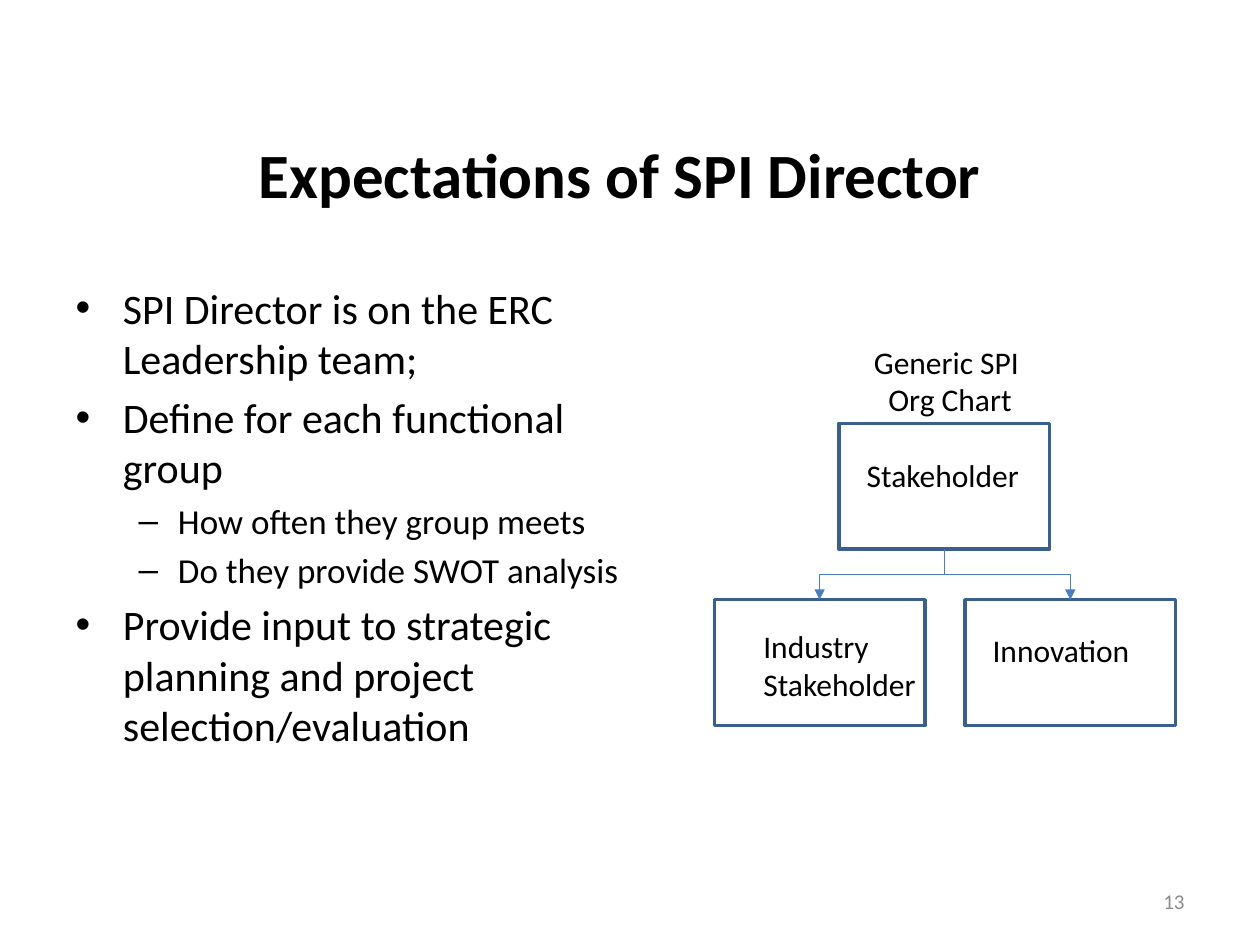
from lxml.etree import SubElement
from pptx import Presentation
from pptx.dml.color import RGBColor
from pptx.enum.shapes import MSO_CONNECTOR, MSO_SHAPE
from pptx.enum.text import MSO_ANCHOR, MSO_AUTO_SIZE, PP_ALIGN
from pptx.oxml.ns import qn
from pptx.util import Inches, Pt


def color(value):
    return RGBColor.from_string(value)


class Deck:
    """Style and current slide; lengths are cells of a 100 x 75 grid."""
    FONT, INK, GREY = "Calibri", "000000", "8C8C8C"
    BORDER, ARROW = "3A5F8C", "4B7EBC"
    COLS, ROWS = 100, 75

    def __init__(self, prs):
        self.s = prs.slides.add_slide(prs.slide_layouts[1])
        self.cell = prs.slide_width / self.COLS

    def grid(self, *cells):
        return [round(n * self.cell) for n in cells]

    def place(self, sp, box):
        sp.left, sp.top, sp.width, sp.height = self.grid(*box)

    def style(self, p, size, ink=INK, bold=False, align=None):
        p.alignment = align
        for r in p.runs:
            r.font.name, r.font.size, r.font.bold = self.FONT, Pt(size), bold
            r.font.color.rgb = color(ink)

    def title(self, text, box):
        sp = self.s.shapes.title
        self.place(sp, box)
        tf = sp.text_frame
        tf.text = text
        tf.vertical_anchor = MSO_ANCHOR.MIDDLE
        self.style(tf.paragraphs[0], 36, bold=True, align=PP_ALIGN.CENTER)

    def bullets(self, items, box):
        sp = self.s.placeholders[1]
        self.place(sp, box)
        tf = sp.text_frame
        tf.text = "\n".join(text for _, text in items)
        tf.auto_size = MSO_AUTO_SIZE.NONE
        for p, (level, _) in zip(tf.paragraphs, items):
            p.level = level
            self.style(p, 20 if level else 24)
        tf.paragraphs[0].space_before = Pt(0)

    def label(self, text, box, size=18, ink=INK, align=PP_ALIGN.LEFT, wrap=False):
        tf = self.s.shapes.add_textbox(*self.grid(*box)).text_frame
        tf.text = text
        tf.word_wrap = wrap
        tf.vertical_anchor = MSO_ANCHOR.MIDDLE if wrap else MSO_ANCHOR.TOP
        for p in tf.paragraphs:
            self.style(p, size, ink, align=align)

    def frame(self, box):
        sp = self.s.shapes.add_shape(MSO_SHAPE.RECTANGLE, *self.grid(*box))
        sp.shadow.inherit = False
        sp.fill.background()
        sp.line.color.rgb = color(self.BORDER)
        sp.line.width = Pt(2)

    def elbow(self, x1, y1, x2, y2):
        """Down, across and down again: an elbow turned by a quarter."""
        drop, span = y2 - y1, abs(x2 - x1)
        left, top = (x1 + x2 - drop) / 2, (y1 + y2 - span) / 2
        cn = self.s.shapes.add_connector(
            MSO_CONNECTOR.ELBOW, *self.grid(left, top, left + drop, top + span))
        cn.line.color.rgb = color(self.ARROW)
        cn.line.width = Pt(0.75)
        spPr = cn._element.spPr
        xfrm = spPr.find(qn("a:xfrm"))
        if x2 > x1:
            xfrm.set("rot", "16200000")
            xfrm.set("flipH", "1")
        else:
            xfrm.set("rot", "5400000")
        SubElement(spPr.find(qn("a:ln")), qn("a:tailEnd"), type="triangle")
        SubElement(spPr, qn("a:effectLst"))


def main():
    prs = Presentation()
    prs.slide_width, prs.slide_height = Inches(10), Inches(7.5)
    deck = Deck(prs)

    # Title, list and page number
    deck.title("Expectations of SPI Director", (11.7, 7.5, 75, 12.5))
    deck.bullets([
        (0, "SPI Director is on the ERC Leadership team;"),
        (0, "Define for each functional group"),
        (1, "How often they group meets"),
        (1, "Do they provide SWOT analysis"),
        (0, "Provide input to strategic planning and project selection/evaluation"),
    ], (5, 21.9, 49.2, 45.8))
    deck.label("13", (71.7, 69.5, 23.3, 4), 12, deck.GREY, PP_ALIGN.RIGHT, wrap=True)

    # Org chart: one parent above two children
    w, h = 16.7, 10
    parent_x, parent_y, child_y = 66.6, 33.6, 47.6
    deck.frame((parent_x, parent_y, w, h))
    for child_x in (76.6, 56.7):
        deck.frame((child_x, child_y, w, h))
        deck.elbow(parent_x + w / 2, parent_y + h, child_x + w / 2, child_y)

    # Org chart labels
    deck.label("Generic SPI \nOrg Chart", (68.3, 26.7, 14.2, 7.1), align=PP_ALIGN.CENTER)
    deck.label("Stakeholder", (67.8, 35.7, 14.2, 4))
    deck.label("Industry\nStakeholder", (59.6, 49.3, 14.2, 7.1))
    deck.label("Innovation", (77.8, 49.6, 13, 4))

    prs.save("out.pptx")


if __name__ == "__main__":
    main()
